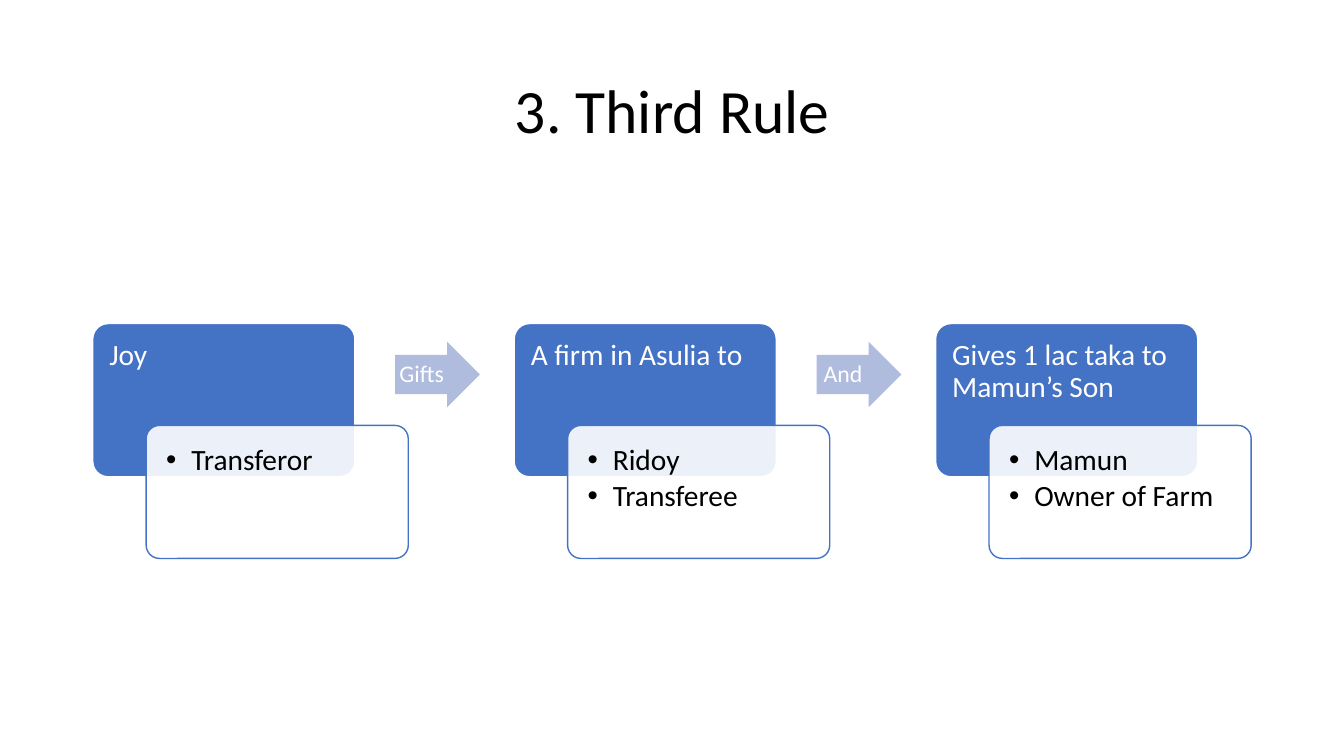
"""Build the "Third Rule" slide: three linked steps with detail cards."""
from lxml.etree import SubElement
from pptx import Presentation
from pptx.dml.color import RGBColor
from pptx.enum.shapes import MSO_SHAPE as Preset
from pptx.enum.text import MSO_ANCHOR as Anchor, PP_ALIGN as Align
from pptx.oxml.ns import qn
from pptx.util import Inches, Pt

COLORS = {"blue": "4472C4", "arrow": "B0BCDE", "white": "FFFFFF", "black": "000000"}
STEPS = [
    ("Joy", ["Transferor"], "Gifts"),
    ("A firm in Asulia to", ["Ridoy", "Transferee"], "And"),
    ("Gives 1 lac taka to Mamun’s Son", ["Mamun", "Owner of Farm"], None),
]
LEFT, PITCH = 0.92, 4.18


def write(shape, lines, size, color="white", align=Align.LEFT, anchor=Anchor.TOP,
          insets=(0.1, 0.05, 0.1, 0.05), bullets=False):
    """Fill a shape with formatted paragraphs."""
    frame = shape.text_frame
    frame.word_wrap = True
    frame.vertical_anchor = anchor
    (frame.margin_left, frame.margin_top,
     frame.margin_right, frame.margin_bottom) = map(Inches, insets)
    for index, line in enumerate(lines):
        para = frame.add_paragraph() if index else frame.paragraphs[0]
        para.alignment = align
        para.line_spacing = 0.9
        if bullets:
            para.space_after = Pt(3)
            properties = para._p.get_or_add_pPr()
            properties.set("marL", str(Inches(0.25)))
            properties.set("indent", str(Inches(-0.25)))
            SubElement(properties, qn("a:buFont"), typeface="Arial")
            SubElement(properties, qn("a:buChar"), char="•")
        span = para.add_run()
        span.text = line
        span.font.size = Pt(size)
        span.font.name = "Calibri"
        span.font.color.rgb = RGBColor.from_string(COLORS[color])


def add_block(preset, left, top, width, height, fill, line=None, adjustments=(0.1,)):
    """Add a filled preset shape."""
    block = slide.shapes.add_shape(preset, *map(Inches, (left, top, width, height)))
    block.shadow.inherit = False
    for index, value in enumerate(adjustments):
        block.adjustments[index] = value
    block.fill.solid()
    block.fill.fore_color.rgb = RGBColor.from_string(COLORS[fill])
    if line:
        block.line.color.rgb = RGBColor.from_string(COLORS[line])
        block.line.width = Pt(1)
    else:
        block.line.fill.background()
    return block


deck = Presentation()
deck.slide_width, deck.slide_height = Inches(13.33), Inches(7.5)
slide = deck.slides.add_slide(deck.slide_layouts[5])

title = slide.shapes.title
title.left, title.top, title.width, title.height = map(Inches, (0.92, 0.4, 11.5, 1.45))
write(title, ["3. Third Rule"], 44, color="black", align=Align.CENTER, anchor=Anchor.MIDDLE)

for number, (heading, details, link) in enumerate(STEPS):
    left = LEFT + number * PITCH
    step = add_block(Preset.ROUNDED_RECTANGLE, left, 3.21, 2.6, 1.52, "blue", line="white")
    write(step, [heading], 21, insets=(0.12, 0.12, 0.12, 0.09))

    card = add_block(Preset.ROUNDED_RECTANGLE, left + 0.53, 4.22, 2.6, 1.32, "white", line="blue")
    card_color = card._element.spPr.find(qn("a:solidFill")).find(qn("a:srgbClr"))
    SubElement(card_color, qn("a:alpha"), val="90000")
    write(card, details, 21, color="black", insets=(0.16,) * 4, bullets=True)

    if link:
        arrow = add_block(Preset.RIGHT_ARROW, left + 3, 3.39, 0.84, 0.65, "arrow",
                          adjustments=(0.6, 0.5))
        write(arrow, [link], 17, align=Align.CENTER, anchor=Anchor.MIDDLE,
              insets=(0, 0, 0.12, 0))

deck.save("out.pptx")
